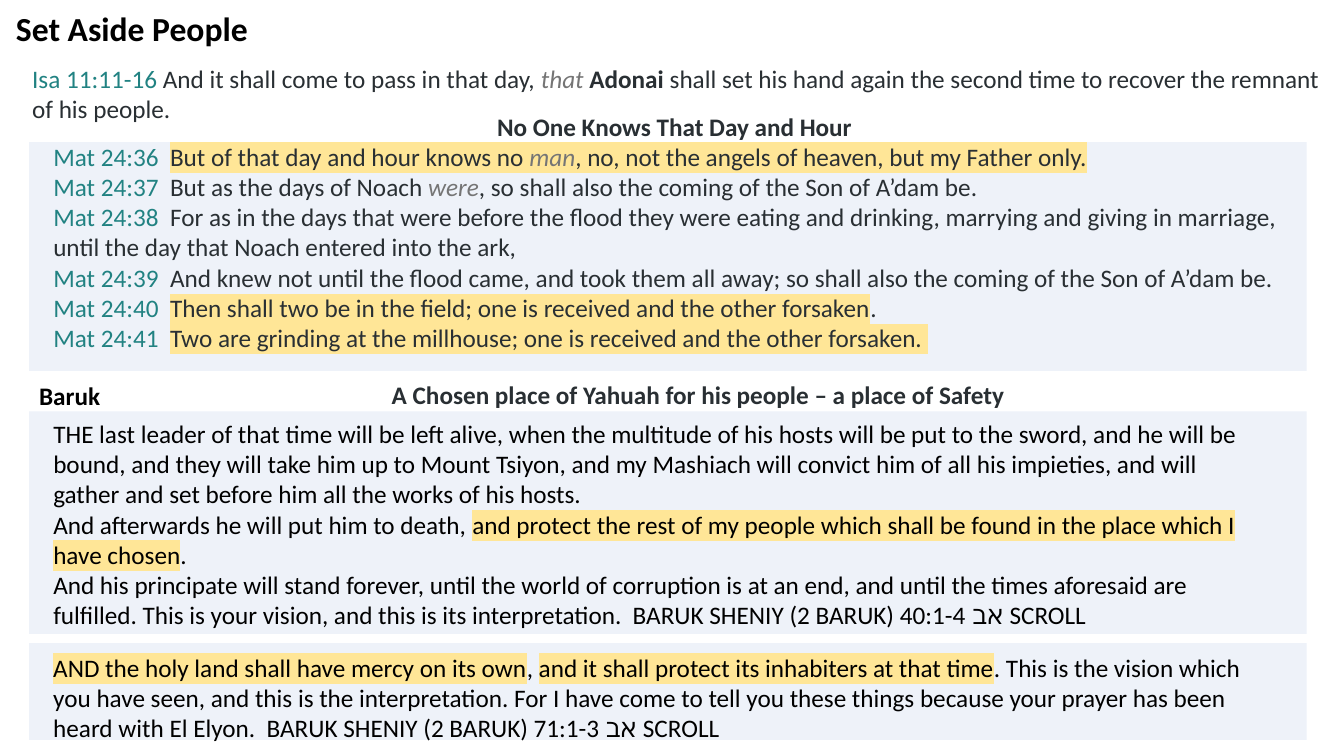
from pptx import Presentation
from pptx import util as u
from pptx.dml.color import RGBColor
from pptx.enum import shapes, text
from pptx.oxml import parse_xml
from pptx.oxml.ns import nsdecls

MARK = "FFE697"
PANEL = "EEF2F9"
BLACK, INK, TEAL, GREY = "000000", "292F33", "218282", "757575"
EDITION = "אב SCROLL"

# Format values for each kind of wording
STYLES = {
    "plain": {"color": BLACK},
    "marked": {"color": BLACK, "mark": MARK},
    "title": {"color": BLACK, "bold": True, "size": u.Pt(24)},
    "label": {"color": BLACK, "bold": True},
    "heading": {"color": INK, "bold": True},
    "verse": {"color": INK},
    "verse marked": {"color": INK, "mark": MARK},
    "added": {"color": GREY, "italic": True},
    "added marked": {"color": GREY, "italic": True, "mark": MARK},
    "reference": {"color": TEAL},
}


def rgb(value):
    return RGBColor.from_string(value)


class Page:
    """Holds the base text style and the current slide."""

    def __init__(self, deck):
        self.slide = deck.slides.add_slide(deck.slide_layouts[6])
        self.base = {"name": "Calibri", "size": u.Pt(18), "bold": False, "italic": False}

    def panel(self, *place):
        box = self.slide.shapes.add_shape(shapes.MSO_SHAPE.RECTANGLE, *map(u.Inches, place))
        box.shadow.inherit = False
        box.fill.solid()
        box.fill.fore_color.rgb = rgb(PANEL)
        box.line.fill.background()

    def span(self, para, wording, style):
        span = para.add_run()
        span.text = wording
        values = {**self.base, **STYLES[style]}
        mark = values.pop("mark", None)
        span.font.color.rgb = rgb(values.pop("color"))
        for name, value in values.items():
            setattr(span.font, name, value)
        if mark:
            highlight = parse_xml(
                f'<a:highlight {nsdecls("a")}><a:srgbClr val="{mark}"/></a:highlight>')
            span.font.fill._xPr.find(
                "{http://schemas.openxmlformats.org/drawingml/2006/main}solidFill"
            ).addnext(highlight)

    def text(self, place, paragraphs, spacing=None):
        """Each paragraph is a list of (wording, style) pairs; headings are centred."""
        box = self.slide.shapes.add_textbox(*map(u.Inches, place))
        frame = box.text_frame
        frame.word_wrap = True
        for index, spans in enumerate(paragraphs):
            para = frame.add_paragraph() if index else frame.paragraphs[0]
            if spans[0][1] == "heading":
                para.alignment = text.PP_ALIGN.CENTER
            if spacing:
                para.line_spacing = spacing
            for wording, style in spans:
                self.span(para, wording, style)


def main():
    deck = Presentation()
    deck.slide_width, deck.slide_height = u.Inches(13.33), u.Inches(7.5)
    page = Page(deck)

    # Background panels
    for top, height in ((6.38, 0.96), (1.41, 2.27), (4.08, 2.21)):
        page.panel(0.29, top, 12.67, height)

    # Matthew verses, numbered from 36
    verses = [
        [("But of that day and hour knows no ", "verse marked"), ("man", "added marked"),
         (", no, not the angels of heaven, but my Father only.", "verse marked")],
        [("But as the days of Noach ", "verse"), ("were", "added"),
         (", so shall also the coming of the Son of A’dam be.", "verse")],
        [("For as in the days that were before the flood they were eating and drinking, "
          "marrying and giving in marriage, until the day that Noach entered into the ark,",
          "verse")],
        [("And knew not until the flood came, and took them all away; so shall also "
          "the coming of the Son of A’dam be.", "verse")],
        [("Then shall two be in the field; one is received and the other forsaken",
          "verse marked"), (".", "verse")],
        [("Two", "verse marked"), (" ", "added marked"),
         ("are grinding at the millhouse; one is received and the other forsaken. ",
          "verse marked")],
    ]
    page.text((0.43, 1.05, 12.52, 2.52),
              [[("No One Knows That Day and Hour", "heading")]]
              + [[(f"Mat 24:{number}  ", "reference"), *spans]
                 for number, spans in enumerate(verses, 36)])

    # Baruk passages
    page.text((0.43, 4.1, 11.98, 2.22), [
        [("THE last leader of that time will be left alive, when the multitude of his hosts "
          "will be put to the sword, and he will be bound, and they will take him up to Mount "
          "Tsiyon, and my Mashiach will convict him of all his impieties, and will gather and "
          "set before him all the works of his hosts.", "plain")],
        [("And afterwards he will put him to death, ", "plain"),
         ("and protect the rest of my people which shall be found in the place which I have "
          "chosen", "marked"), (".", "plain")],
        [("And his principate will stand forever, until the world of corruption is at an end, "
          "and until the times aforesaid are fulfilled. This is your vision, and this is its "
          f"interpretation.  BARUK SHENIY (2 BARUK) 40:1-4 {EDITION}", "plain")],
    ])
    page.text((0.43, 6.42, 12.14, 1.01), [
        [("AND the holy land shall have mercy on its own", "marked"), (", ", "plain"),
         ("and it shall protect its inhabiters at that time", "marked"),
         (". This is the vision which you have seen, and this is the interpretation. For I "
          "have come to tell you these things because your prayer has been heard with El "
          f"Elyon.  BARUK SHENIY (2 BARUK) 71:1-3 {EDITION}", "plain")],
    ])

    # Headings
    page.text((3.59, 3.71, 6.67, 0.4),
              [[("A Chosen place of Yahuah for his people – a place of Safety", "heading")]])
    page.text((0.06, 0.07, 12.88, 0.57), [[("Set Aside People", "title")]], spacing=0.9)
    page.text((0.29, 3.72, 1.2, 0.4), [[("Baruk", "label")]])

    # Isaiah verse
    page.text((0.22, 0.58, 13.05, 0.71), [
        [("Isa 11:11-16", "reference"), (" And it shall come to pass in that day, ", "verse"),
         ("that ", "added"), ("Adonai ", "heading"),
         ("shall set his hand again the second time to recover the remnant of his people.",
          "verse")],
    ])

    deck.save("out.pptx")


if __name__ == "__main__":
    main()
